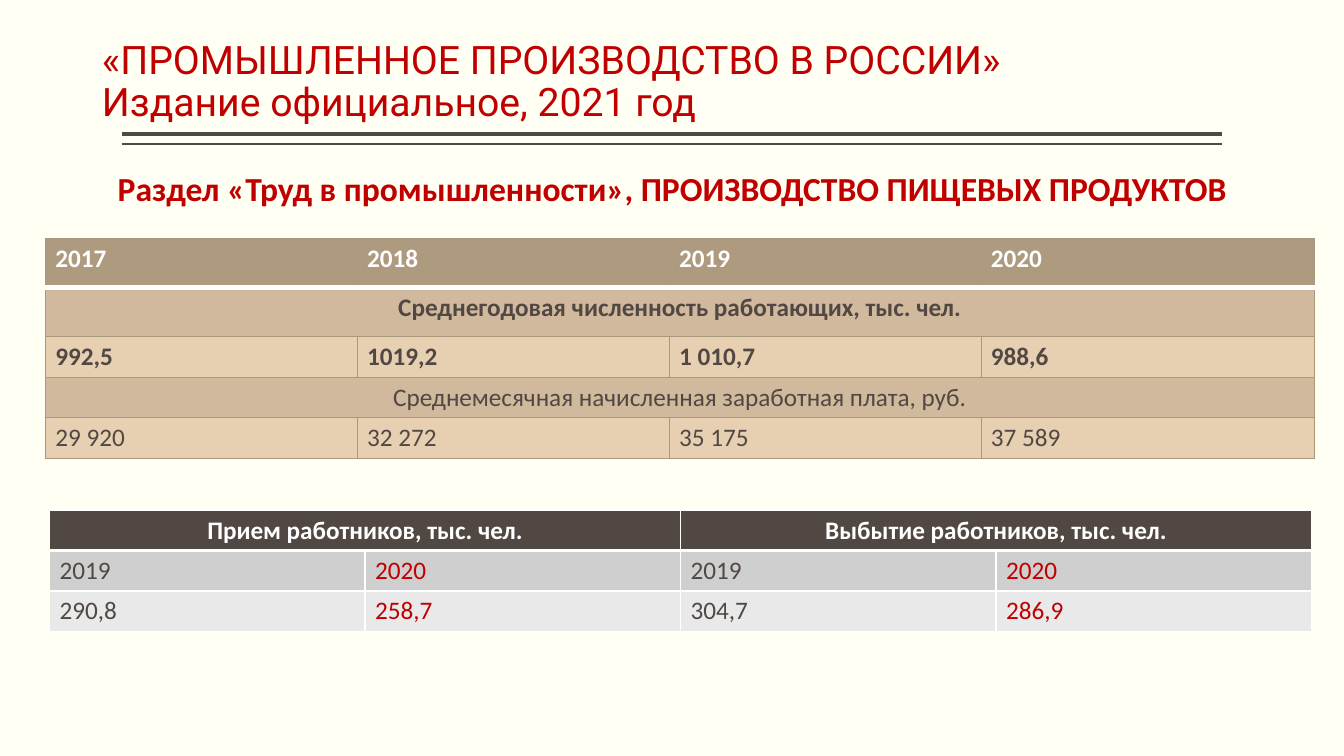
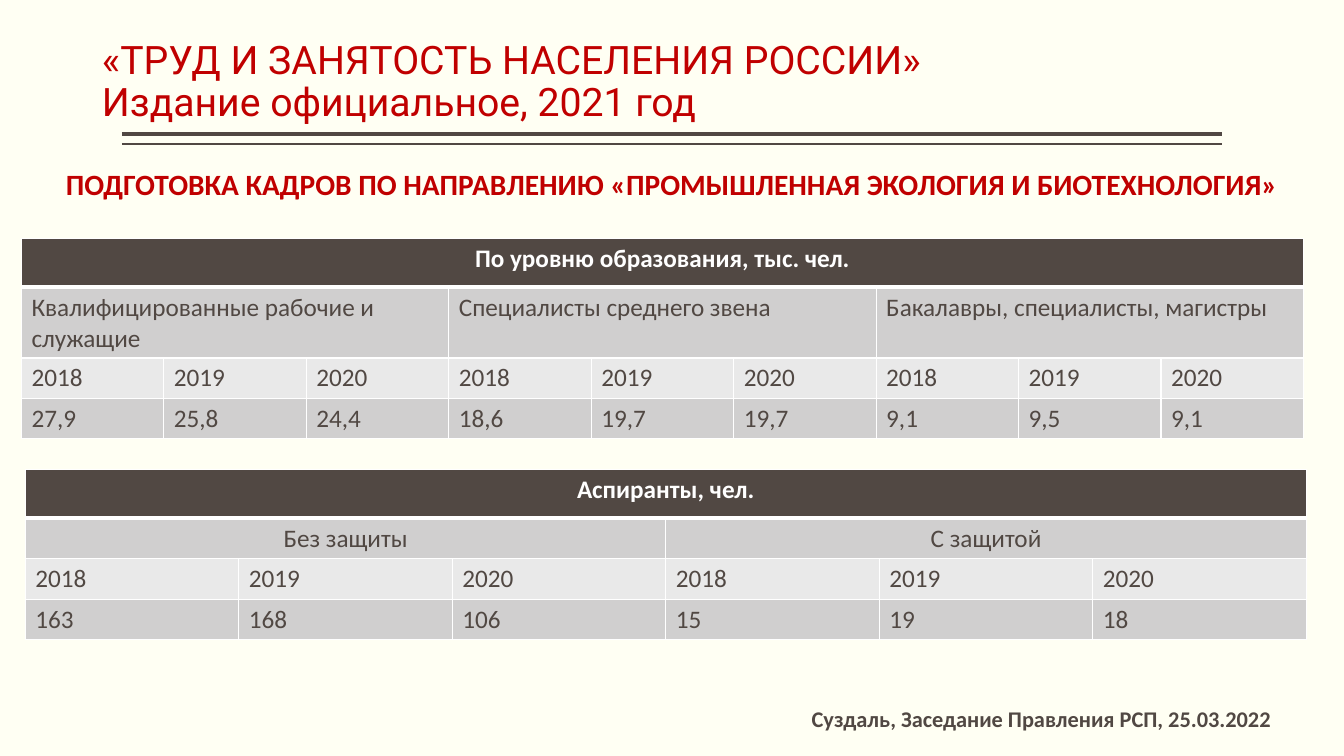
import dataclasses

import lxml.etree
import pptx
import pptx.dml.color
import pptx.enum.shapes
import pptx.enum.text
import pptx.oxml.ns
import pptx.util

Cm = pptx.util.Cm
Pt = pptx.util.Pt
Align = pptx.enum.text.PP_ALIGN
qn = pptx.oxml.ns.qn


@dataclasses.dataclass(frozen=True)
class Look:
    head: str
    bands: tuple
    edge: str
    thin: float
    thick: float


class Theme:
    paper = "FFFFF3"
    ink = "514843"
    red = "C00000"
    white = "FFFFFF"
    serif = "Roboto"
    sans = "Calibri"
    title = 28
    lead = 24
    long = 21
    cell = 18
    foot = 16
    tan = Look("AE9A7E", ("D1B99D", "E7CFB2"), "AB977A", 0.5, 3.78)
    gray = Look(ink, ("D0CFCF", "E9E9E9"), white, 1, 3)


def color(code):
    return pptx.dml.color.RGBColor.from_string(code)


class Deck:
    def __init__(self, theme):
        self.theme = theme
        self.file = pptx.Presentation()
        self.file.slide_width = Cm(33.87)
        self.file.slide_height = Cm(19.05)
        fill = self.file.slide_master.background.fill
        fill.solid()
        fill.fore_color.rgb = color(theme.paper)
        self.slide = None

    def page(self, *lines):
        layout = self.file.slide_layouts.get_by_name("Title Only")
        self.slide = self.file.slides.add_slide(layout)
        self.rule(3.38, 3)
        self.rule(3.63, 1)
        self.title("\v".join(lines))

    def style(self, para, size, tint, bold=False, face=None, align=Align.CENTER):
        para.alignment = align
        font = para.font
        font.name = face or self.theme.sans
        font.size = Pt(size)
        font.bold = bold
        font.color.rgb = color(tint)

    def title(self, text):
        shape = self.slide.shapes.title
        shape.left, shape.top = Cm(2.57), Cm(0.23)
        shape.width, shape.height = Cm(28.73), Cm(3.05)
        frame = shape.text_frame
        frame.text = text
        frame.word_wrap = True
        frame.auto_size = pptx.enum.text.MSO_AUTO_SIZE.NONE
        frame.vertical_anchor = pptx.enum.text.MSO_ANCHOR.BOTTOM
        frame.margin_left = frame.margin_right = 0
        para = frame.paragraphs[0]
        para.line_spacing = 0.9
        theme = self.theme
        self.style(para, theme.title, theme.red, face=theme.serif, align=Align.LEFT)

    def rule(self, top, width):
        line = self.slide.shapes.add_connector(
            pptx.enum.shapes.MSO_CONNECTOR.STRAIGHT,
            Cm(3.07), Cm(top), Cm(30.8), Cm(top))
        line.line.color.rgb = color(self.theme.ink)
        line.line.width = Pt(width)
        lxml.etree.SubElement(line.element.spPr, qn("a:effectLst"))

    def text(self, text, left, top, width, height, size, tint):
        box = self.slide.shapes.add_textbox(Cm(left), Cm(top), Cm(width), Cm(height))
        frame = box.text_frame
        frame.word_wrap = True
        frame.text = text
        self.style(frame.paragraphs[0], size, tint, bold=True)

    def edges(self, cell, look, row):
        props = cell._tc.get_or_add_tcPr()
        heavy = {0: "B", 1: "T"}.get(row)
        for spot, side in enumerate("LRTB"):
            thick = side == heavy
            width = look.thick if thick else look.thin
            line = lxml.etree.Element(qn(f"a:ln{side}"), w=str(Pt(width)))
            fill = lxml.etree.SubElement(line, qn("a:solidFill"))
            tint = self.theme.white if thick else look.edge
            lxml.etree.SubElement(fill, qn("a:srgbClr"), val=tint)
            props.insert(spot, line)

    def table(self, left, top, cols, tall, rows, look, bold=(0,), flush=(), red=()):
        shape = self.slide.shapes.add_table(
            len(rows), len(cols), Cm(left), Cm(top), Cm(sum(cols)), Cm(sum(tall)))
        grid = shape.table
        for col, width in zip(grid.columns, cols):
            col.width = Cm(width)
        for row, height in zip(grid.rows, tall):
            row.height = Cm(height)
        for r, words in enumerate(rows):
            span = len(cols) // len(words)
            back = look.bands[(r - 1) % 2] if r else look.head
            for c in range(len(cols)):
                cell = grid.cell(r, c)
                cell.fill.solid()
                cell.fill.fore_color.rgb = color(back)
                self.edges(cell, look, r)
            for n, word in enumerate(words):
                cell = grid.cell(r, n * span)
                if span > 1:
                    cell.merge(grid.cell(r, (n + 1) * span - 1))
                cell.text = word
                tint = self.theme.ink if r else self.theme.white
                if r and n in red:
                    tint = self.theme.red
                mid = span > 1 and r not in flush
                self.style(cell.text_frame.paragraphs[0], self.theme.cell, tint,
                           bold=r in bold, align=Align.CENTER if mid else Align.LEFT)


def main():
    theme = Theme()
    deck = Deck(theme)
    issue = "Издание официальное, 2021 год"
    years = ["2018", "2019", "2020"]

    deck.page("«ПРОМЫШЛЕННОЕ ПРОИЗВОДСТВО В РОССИИ»", issue)
    deck.text("Раздел «Труд в промышленности», ПРОИЗВОДСТВО ПИЩЕВЫХ ПРОДУКТОВ",
              0.84, 4.11, 32.2, 1.27, theme.lead, theme.red)
    deck.table(1.14, 6, [7.86] * 3 + [8.4], [1.24] * 2 + [1.02] * 3, [
        ["2017"] + years,
        ["Среднегодовая численность работающих, тыс. чел."],
        ["992,5", "1019,2", "1 010,7", "988,6"],
        ["Среднемесячная начисленная заработная плата, руб."],
        ["29 920", "32 272", "35 175", "37 589"],
    ], theme.tan, bold=(0, 1, 2))
    deck.table(1.25, 12.85, [7.95] * 4, [1.02] * 3, [
        ["Прием работников, тыс. чел.", "Выбытие работников, тыс. чел."],
        years[1:] * 2,
        ["290,8", "258,7", "304,7", "286,9"],
    ], theme.gray, red=(1, 3))

    deck.page("«ТРУД И ЗАНЯТОСТЬ НАСЕЛЕНИЯ РОССИИ»", issue)
    deck.text("ПОДГОТОВКА КАДРОВ ПО НАПРАВЛЕНИЮ «ПРОМЫШЛЕННАЯ ЭКОЛОГИЯ И БИОТЕХНОЛОГИЯ»",
              0, 4.06, 33.87, 1.14, theme.long, theme.red)
    deck.table(0.54, 6, [3.59] * 9, [1.24, 1.77, 1.02, 1.02], [
        ["По уровню образования, тыс. чел."],
        ["Квалифицированные рабочие и служащие", "Специалисты среднего звена",
         "Бакалавры, специалисты, магистры"],
        years * 3,
        ["27,9", "25,8", "24,4", "18,6", "19,7", "19,7", "9,1", "9,5", "9,1"],
    ], theme.gray, flush=(1,))
    deck.table(0.64, 11.84, [5.38] * 6, [1.22] + [1.02] * 3, [
        ["Аспиранты, чел."],
        ["Без защиты", "С защитой"],
        years * 2,
        ["163", "168", "106", "15", "19", "18"],
    ], theme.gray)
    deck.text("Суздаль, Заседание Правления РСП, 25.03.2022",
              18.64, 17.65, 15.21, 0.94, theme.foot, theme.ink)

    deck.file.save("out.pptx")


if __name__ == "__main__":
    main()
